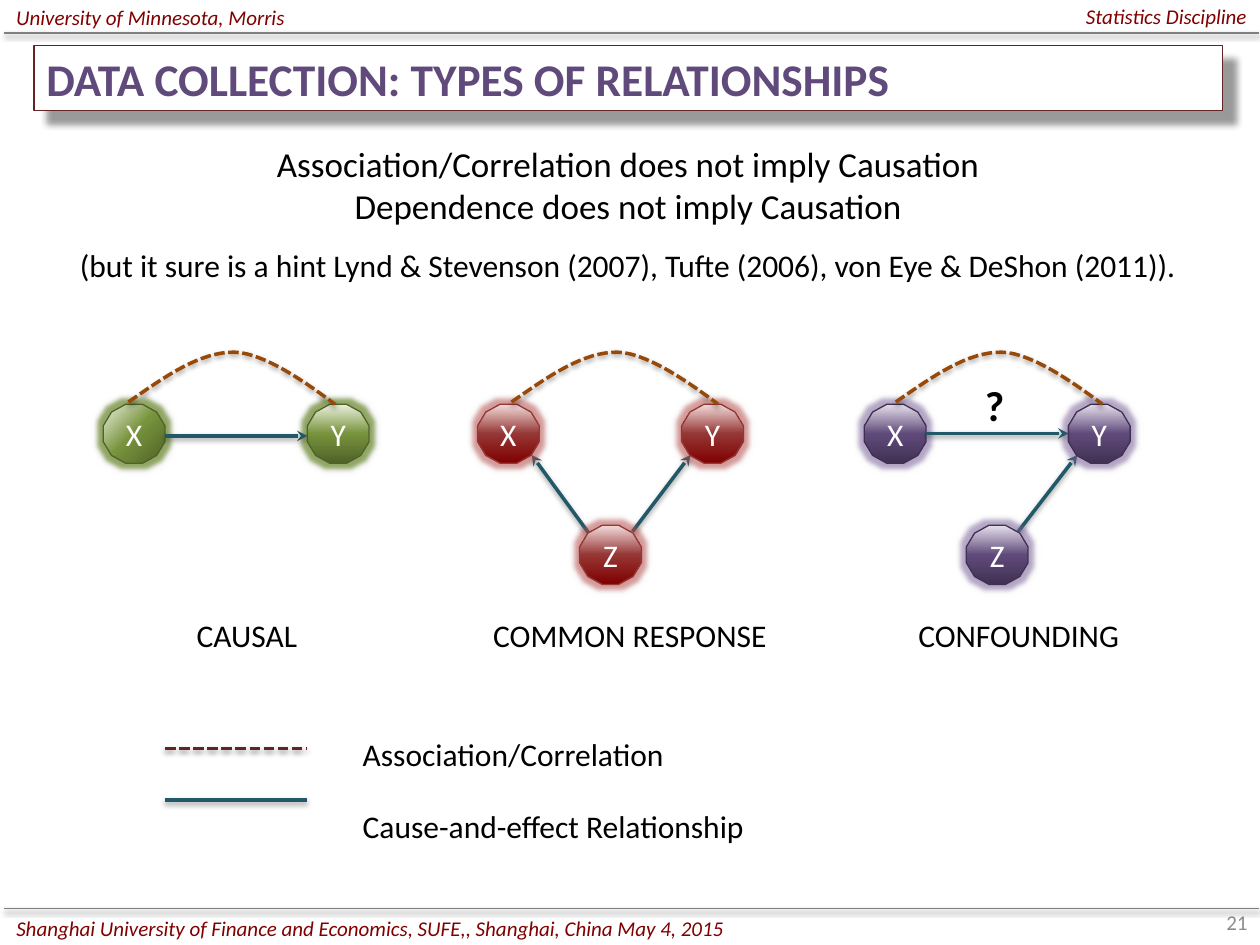
from lxml import etree
from pptx import Presentation
from pptx.dml.color import RGBColor
from pptx.enum import dml, shapes, text
from pptx.oxml import ns, parse_xml
from pptx.util import Pt

COLORS = {
    "black": "000000", "white": "FFFFFF", "maroon": "800000", "rule": "7F7F7F",
    "number": "8C8C8C", "title": "604A7B", "border": "632523",
    "cause": "215968", "arc": "984807",
}
# Node styles: gradient from dark to light, outline, glow colour and opacity
STYLES = {
    "green": (("4F6228", "77933C", "EBF1DE"), "4F6228", "77933C", 75),
    "red": (("800000", "953735", "F2DCDB"), "953735", "C0504D", 50),
    "purple": (("403152", "604A7B", "E6E0EC"), "403152", "8064A2", 50),
}
LINE_SHADOW = (38, 3.1, 1.6, 90)
TITLE_SHADOW = (40, 4, 10, 45)
NODE_SHADOW = (15, 5, 0, 225)
NODE_W, NODE_H, NODE_TOP, THIRD_TOP = 35.3, 33.8, 231, 300.2
Y_SHIFT, Z_SHIFT = 116.6, 58.3
LEFT, CENTER, RIGHT = text.PP_ALIGN.LEFT, text.PP_ALIGN.CENTER, text.PP_ALIGN.RIGHT


def rgb(name):
    return RGBColor.from_string(COLORS.get(name, name))


def color_xml(value, opacity):
    return f'<a:srgbClr val="{value}"><a:alpha val="{opacity * 1000}"/></a:srgbClr>'


def add_effects(shape, shadow, glow=None):
    opacity, blur, distance, angle = shadow
    glow_xml = f'<a:glow rad="{Pt(5)}">{color_xml(*glow)}</a:glow>' if glow else ""
    properties = shape._element.spPr
    for old in properties.findall(ns.qn("a:effectLst")):
        properties.remove(old)
    properties.append(parse_xml(
        f'<a:effectLst {ns.nsdecls("a")}>{glow_xml}'
        f'<a:outerShdw blurRad="{Pt(blur)}" dist="{Pt(distance)}" dir="{angle * 60000}" '
        f'algn="ctr" rotWithShape="0">{color_xml(COLORS["black"], opacity)}'
        '</a:outerShdw></a:effectLst>'))


def set_line(shape, color, width, dashed=False):
    shape.line.color.rgb = rgb(color)
    shape.line.width = Pt(width)
    if dashed:
        shape.line.dash_style = dml.MSO_LINE.SQUARE_DOT


def write(shape, lines, size, color="black", align=LEFT, middle=False,
          bold=False, italic=False, wrap=True):
    frame = shape.text_frame
    frame.word_wrap = wrap
    frame.vertical_anchor = text.MSO_ANCHOR.MIDDLE if middle else text.MSO_ANCHOR.TOP
    for index, line in enumerate(lines):
        para = frame.add_paragraph() if index else frame.paragraphs[0]
        para.alignment = align
        span = para.add_run()
        span.text = line
        font = span.font
        font.name, font.size = "Calibri", Pt(size)
        font.bold, font.italic = bold, italic
        font.color.rgb = rgb(color)


def add_text(page, bounds, lines, size, **style):
    box = page.shapes.add_textbox(*map(Pt, bounds))
    write(box, lines, size, **style)


def add_line(page, start, end, color="cause", width=2, dashed=False, arrow=False):
    line = page.shapes.add_connector(
        shapes.MSO_CONNECTOR.STRAIGHT, *map(Pt, (*start, *end)))
    set_line(line, color, width, dashed)
    if arrow:
        etree.SubElement(line.line._get_or_add_ln(), ns.qn("a:tailEnd"), type="stealth")
    add_effects(line, LINE_SHADOW)


def add_node(page, letter, left, top, style, radial=False):
    stops, outline, glow, opacity = STYLES[style]
    node = page.shapes.add_shape(
        shapes.MSO_SHAPE.DODECAGON, *map(Pt, (left, top, NODE_W, NODE_H)))
    stop_xml = "".join(
        f'<a:gs pos="{index * 50000}"><a:srgbClr val="{color}"/></a:gs>'
        for index, color in enumerate(stops))
    direction = '<a:lin ang="16200000" scaled="0"/>'
    if radial:
        # Dark end sits in the bottom right corner
        direction = ('<a:path path="circle">'
                     '<a:fillToRect l="100000" t="100000"/></a:path>')
    node._element.spPr.find(ns.qn("a:prstGeom")).addnext(parse_xml(
        f'<a:gradFill {ns.nsdecls("a")} rotWithShape="1">'
        f'<a:gsLst>{stop_xml}</a:gsLst>{direction}</a:gradFill>'))
    set_line(node, outline, 0.75)
    add_effects(node, NODE_SHADOW, (glow, opacity))
    write(node, [letter], 18, color="white", align=CENTER, middle=True)


def curve_points(start, control_a, control_b, end, steps=16):
    for step in range(1, steps + 1):
        t = step / steps
        weights = ((1 - t) ** 3, 3 * t * (1 - t) ** 2, 3 * t * t * (1 - t), t ** 3)
        yield tuple(
            sum(w * point[axis] for w, point in
                zip(weights, (start, control_a, control_b, end)))
            for axis in (0, 1))


def add_arc(page, left):
    start, peak, end = (left, 229.8), (left + 60.5, 201.3), (left + 118, 231)
    rise = curve_points(start, (left + 20.7, 215.3), (left + 41, 201), peak)
    fall = curve_points(peak, (left + 80, 201.6), (left + 110.2, 225.4), end)
    outline = page.shapes.build_freeform(Pt(start[0]), Pt(start[1]))
    outline.add_line_segments(
        [(Pt(x), Pt(y)) for x, y in (*rise, *fall)], close=False)
    arc = outline.convert_to_shape()
    arc.fill.background()
    set_line(arc, "arc", 2, dashed=True)
    add_effects(arc, LINE_SHADOW)


def add_frame(page):
    # Running header, footer, slide number
    for bounds, words, align in (
        ((2.2, -4.3, 330, 28.8), "University of Minnesota, Morris", LEFT),
        ((389.5, -5, 330, 28.8), "Statistics Discipline", RIGHT),
        ((2.2, 519.1, 419, 22.3), "Shanghai University of Finance and Economics, "
         "SUFE,, Shanghai, China May 4, 2015", LEFT),
    ):
        add_text(page, bounds, [words], 12, color="maroon", italic=True,
                 align=align, middle=True)
    add_text(page, (552, 512.6, 168, 28.8), ["21"], 12, color="number",
             align=RIGHT, middle=True)
    for y in (18.9, 519.1):
        add_line(page, (2.2, y), (719.3, y), "rule", 0.75)


def add_title(page):
    title = page.shapes.add_shape(
        shapes.MSO_SHAPE.RECTANGLE, *map(Pt, (19.5, 25.9, 679, 37.4)))
    title.fill.solid()
    title.fill.fore_color.rgb = rgb("white")
    set_line(title, "border", 0.75)
    add_effects(title, TITLE_SHADOW)
    write(title, ["DATA COLLECTION: TYPES OF RELATIONSHIPS"], 25.9,
          color="title", bold=True, middle=True)


def main():
    deck = Presentation()
    deck.slide_width, deck.slide_height = Pt(720), Pt(540)
    page = deck.slides.add_slide(deck.slide_layouts[6])

    # Arrows from Z, behind the nodes
    for start, end in (((336.2, 304.3), (303.8, 260)),
                       ((361.4, 303.8), (394.6, 260)),
                       ((581.8, 303.8), (615.6, 260))):
        add_line(page, start, end, arrow=True)

    add_frame(page)
    add_title(page)

    # Statements
    add_text(page, (19.5, 77.8, 679, 55.4),
             ["Association/Correlation does not imply Causation",
              "Dependence does not imply Causation"], 20, align=CENTER)
    add_text(page, (19.5, 136.8, 679, 28.8),
             ["(but it sure is a hint Lynd & Stevenson (2007), Tufte (2006), "
              "von Eye & DeShon (2011))."], 18, align=CENTER)

    # Three diagrams: left edge, arc start, caption width
    for name, style, left, arc_left, width, has_third in (
        ("CAUSAL", "green", 59, 73.4, 164.2, False),
        ("COMMON RESPONSE", "red", 272.9, 292.3, 174.2, True),
        ("CONFOUNDING", "purple", 493.9, 511.9, 176.4, True),
    ):
        add_node(page, "X", left, NODE_TOP, style, radial=style == "green")
        add_node(page, "Y", left + Y_SHIFT, NODE_TOP, style)
        if has_third:
            add_node(page, "Z", left + Z_SHIFT, THIRD_TOP, style)
        add_arc(page, arc_left)
        add_text(page, (left, 348.5, width, 28.8), [name], 18, align=CENTER)

    # Arrows from X to Y
    for left, y in ((94.3, 249.1), (529.2, 247.7)):
        add_line(page, (left, y), (left + 81.4, y), arrow=True)
    add_text(page, (555.8, 213.1, 25.9, 36), ["?"], 24, bold=True, wrap=False)

    # Legend
    for words, text_top, line_y, color, dashed in (
        ("Association/Correlation", 416.2, 427.7, "border", True),
        ("Cause-and-effect Relationship", 457.9, 457.2, "cause", False),
    ):
        add_line(page, (94.3, line_y), (175.7, line_y), color, dashed=dashed)
        add_text(page, (200.2, text_top, 247, 28.8), [words], 18)

    deck.save("out.pptx")


if __name__ == "__main__":
    main()
